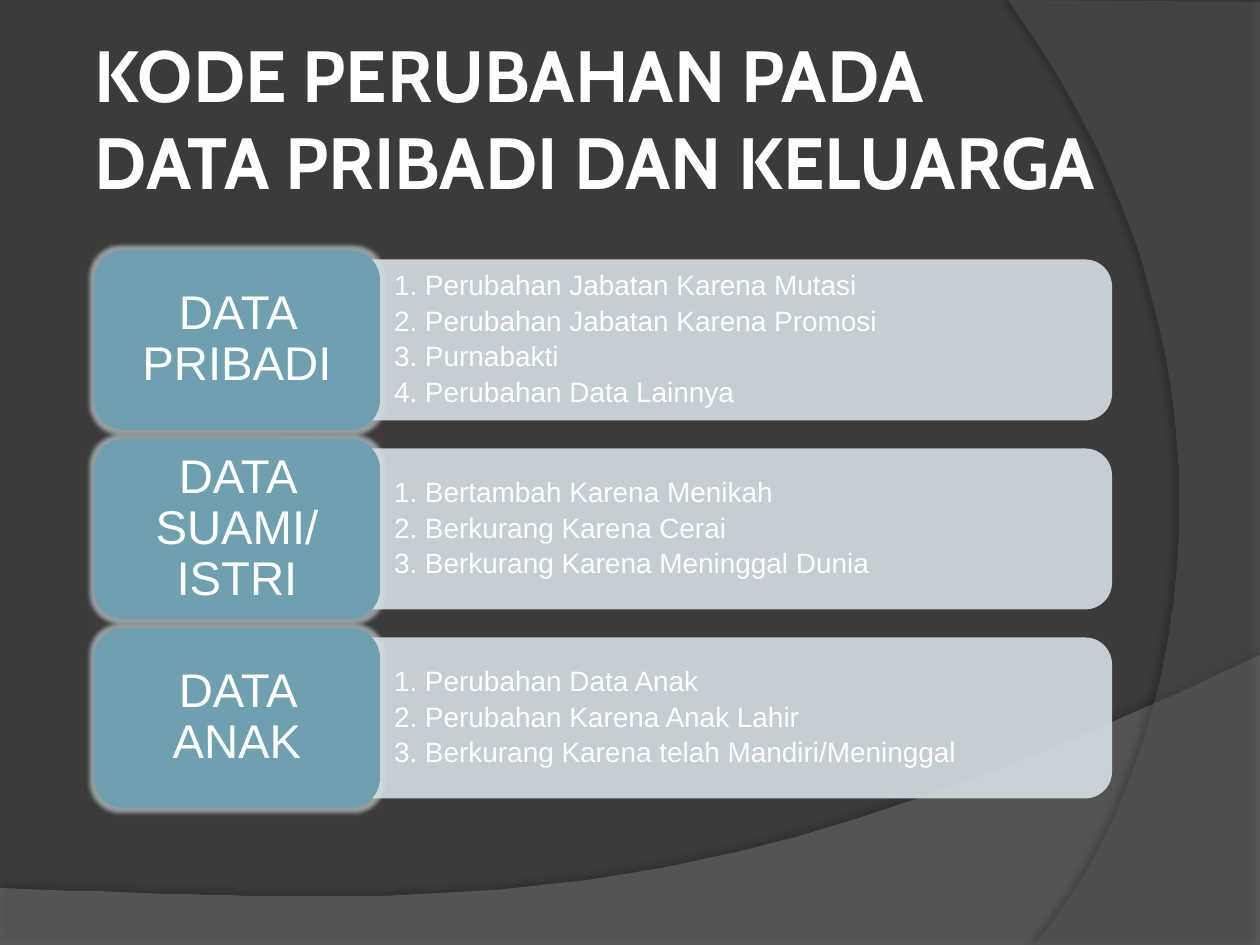
import pptx
import pptx.util
import pptx.oxml
import pptx.dml.color
import pptx.enum.shapes
import pptx.enum.text

PX = 914400 / 126
HUES = {"back": "3B3B3B", "wave": "7F7F7F", "arc": "5E5E5E",
        "panel": "D5DFE4", "label": "6EA0B0", "text": "FFFFFF"}
NS = 'xmlns:a="http://schemas.openxmlformats.org/drawingml/2006/main"'
KIND = pptx.enum.shapes.MSO_SHAPE
ALIGN = pptx.enum.text.PP_ALIGN
RGB = {name: pptx.dml.color.RGBColor.from_string(hue) for name, hue in HUES.items()}


def paint(shape, hue, alpha=100, effect=""):
    shape.shadow.inherit = False
    shape.fill.solid()
    shape.fill.fore_color.rgb = RGB[hue]
    shape.line.fill.background()
    props = shape.fill._xPr
    tone = props.find(".//{*}srgbClr")
    tone.append(pptx.oxml.parse_xml(f'<a:alpha {NS} val="{alpha * 1000}"/>'))
    if effect:
        props.find("{*}effectLst").append(pptx.oxml.parse_xml(effect))


def write(shape, lines, inset, para, font):
    frame = shape.text_frame
    frame.word_wrap = True
    frame.vertical_anchor = pptx.enum.text.MSO_ANCHOR.MIDDLE
    for side in ("left", "right", "top", "bottom"):
        setattr(frame, "margin_" + side, round(inset * PX))
    frame.text = "\n".join(lines)
    for item in frame.paragraphs:
        for key, value in para.items():
            setattr(item, key, value)
        for key, value in font.items():
            setattr(item.font, key, value)
        item.font.color.rgb = RGB["text"]


deck = pptx.Presentation()
deck.slide_width = round(1260 * PX)
deck.slide_height = round(945 * PX)
slide = deck.slides.add_slide(deck.slide_layouts[6])
slide.background.fill.solid()
slide.background.fill.fore_color.rgb = RGB["back"]

curves = [
    ("wave", 45, 35, 270, [(1260, 655), (704, 919), (493, 906), (0, 888)],
     [(0, 945), (1260, 945)]),
    ("arc", 40, 45, 180, [(1034, 945), (1178, 780), (1283, 378), (1008, 0)],
     [(1260, 2), (1260, 945)]),
]
for hue, alpha, dark, turn, knots, rest in curves:
    trail = []
    for step in range(1, 61):
        t = step / 60
        mix = [(1 - t) ** 3, 3 * t * (1 - t) ** 2, 3 * t * t * (1 - t), t ** 3]
        trail.append(tuple(sum(m * k[axis] for m, k in zip(mix, knots))
                           for axis in (0, 1)))
    build = slide.shapes.build_freeform(*knots[0], scale=PX)
    build.add_line_segments(trail + rest, close=True)
    shade = (f'<a:outerShdw {NS} blurRad="50800" dist="44450" dir="{turn * 60000}" '
             f'algn="ctr" rotWithShape="0"><a:srgbClr val="000000">'
             f'<a:alpha val="{dark * 1000}"/></a:srgbClr></a:outerShdw>')
    paint(build.convert_to_shape(), hue, alpha, shade)

rows = [
    ("DATA PRIBADI", ["1. Perubahan Jabatan Karena Mutasi",
                      "2. Perubahan Jabatan Karena Promosi",
                      "3. Purnabakti",
                      "4. Perubahan Data Lainnya"]),
    ("DATA SUAMI/ ISTRI", ["1. Bertambah Karena Menikah",
                           "2. Berkurang Karena Cerai",
                           "3. Berkurang Karena Meninggal Dunia"]),
    ("DATA ANAK", ["1. Perubahan Data Anak",
                   "2. Perubahan Karena Anak Lahir",
                   "3. Berkurang Karena telah Mandiri/Meninggal"]),
]
glow = (f'<a:glow {NS} rad="63500"><a:srgbClr val="{HUES["panel"]}">'
        f'<a:alpha val="60000"/></a:srgbClr></a:glow>')
left, wide, high = 362, 750, 161
for index, (name, lines) in enumerate(rows):
    mid = 340 + 189 * index
    box = [left + (wide - high) / 2, mid - wide / 2, high, wide]
    panel = slide.shapes.add_shape(KIND.ROUND_2_SAME_RECTANGLE,
                                   *[round(v * PX) for v in box])
    panel.rotation = 90
    paint(panel, "panel", 90)

    box = [394, mid - 73, 710, 146]
    items = slide.shapes.add_textbox(*[round(v * PX) for v in box])
    write(items, lines, 0,
          {"line_spacing": 0.9, "space_after": pptx.util.Pt(3)},
          {"name": "Arial", "size": pptx.util.Pt(16)})

    box = [94, mid - 90, 286, 180]
    label = slide.shapes.add_shape(KIND.ROUNDED_RECTANGLE,
                                   *[round(v * PX) for v in box])
    paint(label, "label", effect=glow)
    write(label, [name], 10,
          {"line_spacing": 0.9, "alignment": ALIGN.CENTER},
          {"name": "Arial", "size": pptx.util.Pt(27)})

title = slide.shapes.add_textbox(*[round(v * PX) for v in (88, 38, 1068, 158)])
write(title, ["KODE PERUBAHAN PADA\vDATA PRIBADI DAN KELUARGA"], 7,
      {"alignment": ALIGN.LEFT},
      {"name": "Cabin", "size": pptx.util.Pt(41.4), "bold": True})

deck.save("out.pptx")
